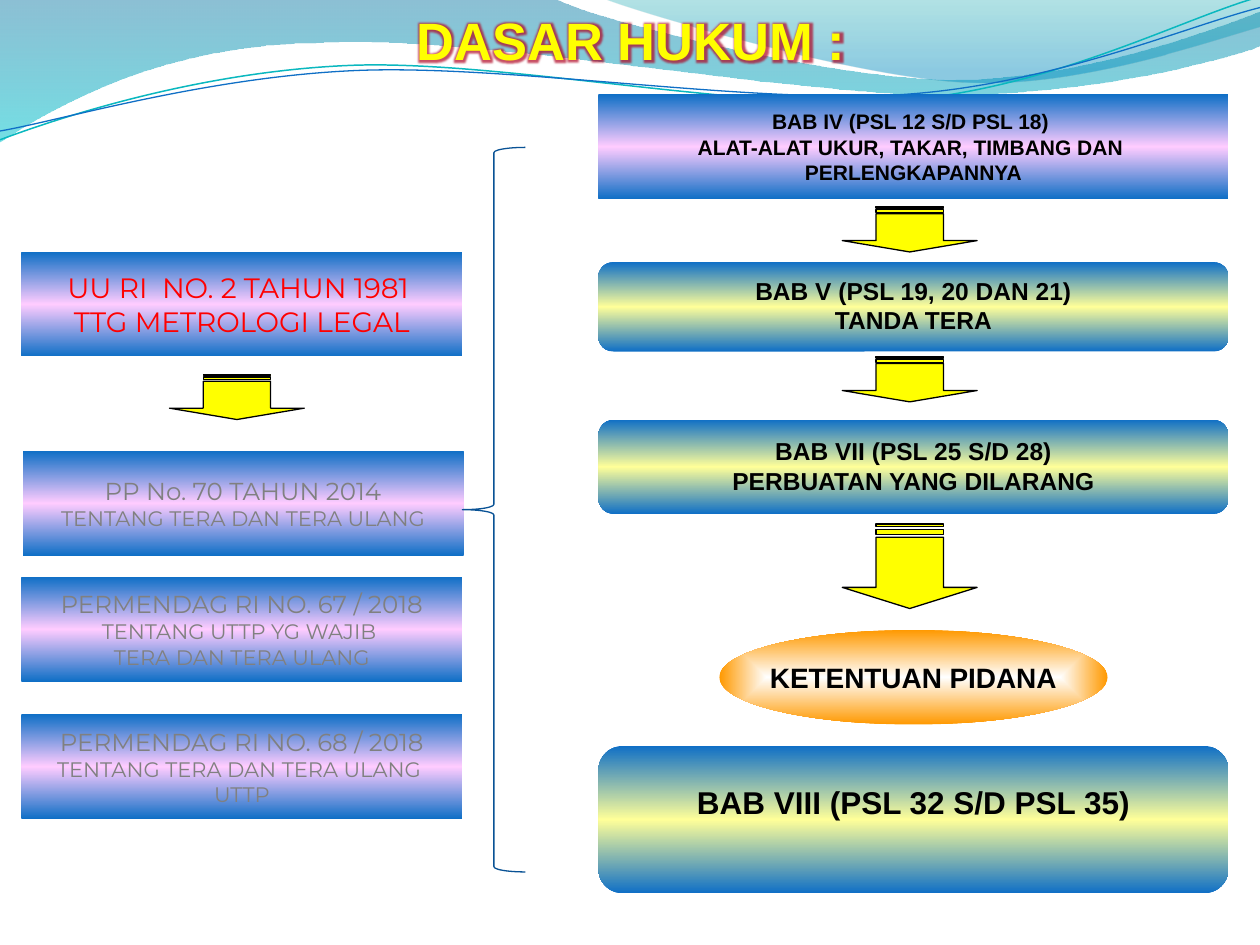
"""Build the slide on the legal basis of metrology, from laws to chapters."""
import pptx
import pptx.util
import pptx.dml.color
import pptx.enum.shapes
import pptx.enum.text
import pptx.oxml.ns
from lxml import etree

Inches, Pt = pptx.util.Inches, pptx.util.Pt
RGB = pptx.dml.color.RGBColor
KIND = pptx.enum.shapes.MSO_SHAPE
qn = pptx.oxml.ns.qn

BLACK, WHITE = RGB(0, 0, 0), RGB(255, 255, 255)
RED, GRAY = RGB(255, 0, 0), RGB(128, 128, 128)
YELLOW, ORANGE = RGB(255, 255, 0), RGB(255, 153, 0)
BLUE, NAVY = RGB(15, 111, 198), RGB(9, 82, 149)
PINK, CREAM = RGB(255, 204, 255), RGB(255, 255, 153)
TEAL, DEEP, AQUA = RGB(10, 184, 191), RGB(0, 116, 161), RGB(0, 198, 207)
SEA, SKY = RGB(0, 161, 169), RGB(0, 139, 191)
GLOW = RGB(176, 0, 32)

BANDS = [
    ([(0, DEEP, 45), (100, AQUA, 55)],
     [[(0, -0.01)], [(4.4, -0.01)],
      [(4.76, 0.17), (6.64, 0.63), (7.58, 0.63)],
      [(8.53, 0.63), (9.58, 0.26), (10, 0.09)], [(10.01, 0.36)],
      [(9.83, 0.44), (8.7, 0.76), (7.46, 0.75)],
      [(6.22, 0.75), (3.82, 0.28), (2.57, 0.34)],
      [(1.29, 0.35), (0.46, 0.83), (-0.01, 1.13)]]),
    ([(0, SEA, 30), (80, SKY, 45)],
     [[(4.79, -0.01)], [(5.09, 0.11), (6.82, 0.62), (7.69, 0.65)],
      [(8.56, 0.69), (9.61, 0.32), (10, 0.21)], [(10, 0)]]),
]
WAVES = [
    (TEAL, 0.85,
     [[(0, 1.11)], [(0.48, 0.93), (1.58, 0.57), (2.77, 0.52)],
      [(3.95, 0.47), (5.93, 0.89), (7.13, 0.8)],
      [(8.33, 0.71), (9.38, 0.15), (9.98, -0.02)]]),
    (BLUE, 0.75,
     [[(0, 1.04)], [(0.47, 0.96), (1.64, 0.61), (2.83, 0.56)],
      [(4.03, 0.51), (5.97, 0.83), (7.17, 0.75)],
      [(8.36, 0.67), (9.41, 0.21), (10, 0.06)]]),
]
LAWS = [
    (0.17, 2, RED, [("UU RI  NO. 2 TAHUN 1981 ", 16), ("TTG METROLOGI LEGAL", 16)]),
    (0.18, 3.58, GRAY, [("PP No. 70 TAHUN 2014", 14),
                        ("TENTANG TERA DAN TERA ULANG", 12)]),
    (0.17, 4.58, GRAY, [("PERMENDAG RI NO. 67 / 2018", 14),
                        ("TENTANG UTTP YG WAJIB ", 12), ("TERA DAN TERA ULANG", 12)]),
    (0.17, 5.67, GRAY, [("PERMENDAG RI NO. 68 / 2018", 14),
                        ("TENTANG TERA DAN TERA ULANG ", 12), ("UTTP", 12)]),
]
PARTS = [
    (KIND.RECTANGLE, 0.75, 0.83, PINK, 0.05,
     [("BAB IV (PSL 12 S/D PSL 18) ", 12),
      ("ALAT-ALAT UKUR, TAKAR, TIMBANG DAN ", 12), ("PERLENGKAPANNYA", 12)]),
    (KIND.ROUNDED_RECTANGLE, 2.08, 0.71, CREAM, 0.07,
     [("BAB V (PSL 19, 20 DAN 21)", 14), ("TANDA TERA", 14)]),
    (KIND.ROUNDED_RECTANGLE, 3.33, 0.75, CREAM, 0.07,
     [("BAB VII (PSL 25 S/D 28)", 14), ("PERBUATAN YANG DILARANG", 14)]),
    (KIND.ROUNDED_RECTANGLE, 5.92, 1.17, CREAM, 0.33,
     [("BAB VIII (PSL 32 S/D PSL 35)", 18)]),
]
ARROWS = [(7.22, 1.64, 0.36), (7.22, 2.83, 0.36), (7.22, 4.16, 0.67), (1.88, 2.97, 0.36)]


def sub(node, tag, **keys):
    return etree.SubElement(node, qn(tag), {k: str(v) for k, v in keys.items()})


def blend(shape, stops, center=False):
    shape.fill.gradient()
    grad = shape._element.spPr.find(qn("a:gradFill"))
    for child in list(grad):
        grad.remove(child)
    steps = sub(grad, "a:gsLst")
    for pos, color, alpha in stops:
        tint = sub(sub(steps, "a:gs", pos=pos * 1000), "a:srgbClr", val=color)
        if alpha < 100:
            sub(tint, "a:alpha", val=alpha * 1000)
    if center:
        way = sub(grad, "a:path", path="shape")
        sub(way, "a:fillToRect", l=50000, t=50000, r=50000, b=50000)
    else:
        sub(grad, "a:lin", ang=5400000, scaled=1)


def stroke(shape, color=None, width=0.75):
    shape.shadow.inherit = False
    if color is None:
        shape.line.fill.background()
    else:
        shape.line.color.rgb = color
        shape.line.width = Pt(width)


def curve(shapes, legs, close):
    first, *rest = [(Inches(x), Inches(y)) for leg in legs for x, y in leg]
    pen = shapes.build_freeform(*first)
    pen.add_line_segments(rest, close=close)
    shape = pen.convert_to_shape()
    lines = iter(list(shape._element.iter(qn("a:lnTo"))))
    for leg in legs[1:]:
        group = [next(lines) for _ in leg]
        if len(leg) == 3:
            bend = etree.Element(qn("a:cubicBezTo"))
            group[0].addprevious(bend)
            for line in group:
                bend.append(line[0])
                line.getparent().remove(line)
    return shape


def add(shapes, kind, *box):
    return shapes.add_shape(kind, *map(Inches, box))


def write(shape, lines, face, color, bold, foot=0.05):
    frame = shape.text_frame
    look = {"word_wrap": False, "margin_bottom": Inches(foot),
            "vertical_anchor": pptx.enum.text.MSO_ANCHOR.MIDDLE}
    for key, val in look.items():
        setattr(frame, key, val)
    for i, (text, size) in enumerate(lines):
        para = frame.add_paragraph() if i else frame.paragraphs[0]
        para.alignment = pptx.enum.text.PP_ALIGN.CENTER
        run = para.add_run()
        run.text = text
        for key, val in {"name": face, "size": Pt(size), "bold": bold}.items():
            setattr(run.font, key, val)
        run.font.color.rgb = color


def head(title):
    box = {"left": 0.02, "top": 0.01, "width": 9.98, "height": 0.61}
    for key, val in box.items():
        setattr(title, key, Inches(val))
    write(title, [("DASAR HUKUM :", 30)], "Arial", YELLOW, True)
    font = title.text_frame.paragraphs[0].runs[0]._r.rPr
    shine = etree.Element(qn("a:effectLst"))
    tint = sub(sub(shine, "a:glow", rad=63500), "a:srgbClr", val=GLOW)
    sub(tint, "a:alpha", val=70000)
    font.find(qn("a:solidFill")).addnext(shine)


def main():
    deck = pptx.Presentation()
    deck.slide_width, deck.slide_height = Inches(10), Inches(7.5)
    slide = deck.slides.add_slide(deck.slide_layouts[5])
    shapes = slide.shapes
    title = shapes.title
    for stops, legs in BANDS:
        band = curve(shapes, legs, True)
        blend(band, stops)
        stroke(band)
    for color, width, legs in WAVES:
        wave = curve(shapes, legs, False)
        wave.fill.background()
        stroke(wave, color, width)
    shapes._spTree.append(title._element)
    head(title)

    for kind, top, high, mid, foot, lines in PARTS:
        part = add(shapes, kind, 4.75, top, 5, high)
        blend(part, [(0, BLUE, 100), (50, mid, 100), (100, BLUE, 100)])
        stroke(part)
        write(part, lines, "Arial", BLACK, True, foot)
    for left, top, color, lines in LAWS:
        law = add(shapes, KIND.RECTANGLE, left, top, 3.5, 0.83)
        blend(law, [(0, BLUE, 100), (50, PINK, 100), (100, BLUE, 100)])
        stroke(law)
        write(law, lines, "Montserrat", color, False)

    oval = add(shapes, KIND.OVAL, 5.71, 5, 3.08, 0.75)
    blend(oval, [(0, WHITE, 100), (100, ORANGE, 100)], center=True)
    stroke(oval)
    write(oval, [("KETENTUAN PIDANA", 16)], "Arial", BLACK, True)

    for mid, top, long in ARROWS:
        arrow = add(shapes, KIND.STRIPED_RIGHT_ARROW,
                    mid - long / 2, top + long / 2 - 1.07 / 2, long, 1.07)
        arrow.rotation = 90
        arrow.adjustments[0], arrow.adjustments[1] = 0.5, 0.25
        arrow.fill.solid()
        arrow.fill.fore_color.rgb = YELLOW
        stroke(arrow, BLACK)

    brace = add(shapes, KIND.LEFT_BRACE, 3.67, 1.17, 0.5, 5.75)
    brace.fill.background()
    stroke(brace, NAVY)
    deck.save("out.pptx")


if __name__ == "__main__":
    main()
